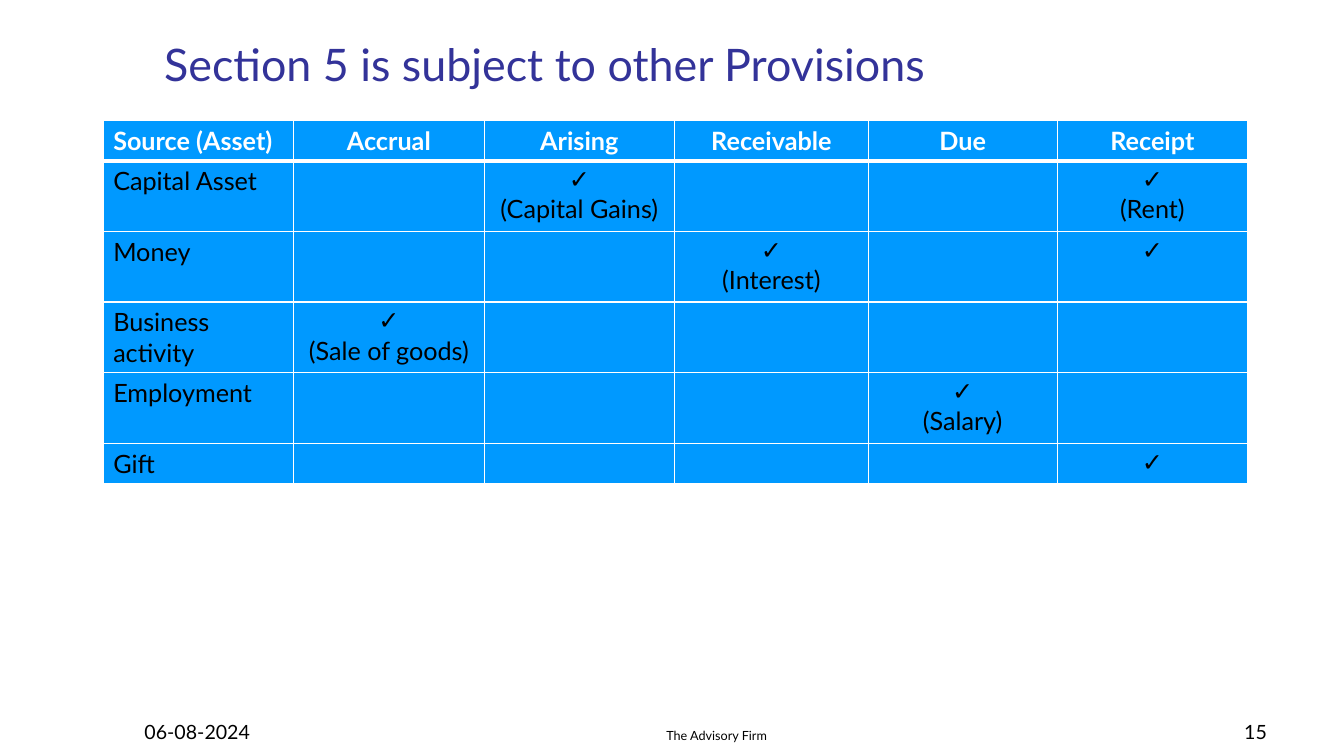
from lxml import etree
from pptx import Presentation
from pptx.dml.color import RGBColor
from pptx.enum import text
from pptx.oxml.ns import qn
from pptx.util import Cm, Pt

COLORS = {"title": "333399", "cell": "0099FF", "light": "FFFFFF", "dark": "000000"}
FONT = "Lato"
CHECK = "✓"
LEFT, CENTER, RIGHT = text.PP_ALIGN.LEFT, text.PP_ALIGN.CENTER, text.PP_ALIGN.RIGHT

HEADERS = ["Source (Asset)", "Accrual", "Arising", "Receivable", "Due", "Receipt"]
# Each source with its checked columns and the note below each check mark
SOURCES = [
    ("Capital Asset", {"Arising": "(Capital Gains)", "Receipt": "(Rent)"}),
    ("Money", {"Receivable": "(Interest)", "Receipt": ""}),
    ("Business activity", {"Accrual": "(Sale of goods)"}),
    ("Employment", {"Due": "(Salary)"}),
    ("Gift", {"Receipt": ""}),
]
COLUMN_WIDTHS = [4.8, 4.8, 4.8, 4.88, 4.76, 4.8]
ROW_HEIGHTS = [1.02, 1.73, 1.73, 1.78, 1.73, 1.02]


def add_run(paragraph, words, size, color, align=LEFT, bold=False):
    paragraph.alignment = align
    run = paragraph.add_run()
    run.text = words
    run.font.name = "Arial" if words == CHECK else FONT
    run.font.size = Pt(size)
    run.font.bold = bold
    run.font.color.rgb = RGBColor.from_string(COLORS[color])


def add_label(slide, words, left, top, width, height, size, color="dark", align=LEFT):
    box = slide.shapes.add_textbox(Cm(left), Cm(top), Cm(width), Cm(height))
    frame = box.text_frame
    frame.word_wrap = True
    frame.vertical_anchor = text.MSO_ANCHOR.BOTTOM
    add_run(frame.paragraphs[0], words, size, color, align)


def add_border(cell, side, width):
    properties = cell._tc.get_or_add_tcPr()
    line = etree.SubElement(properties, qn(f"a:ln{side}"), w=str(Pt(width)))
    fill = etree.SubElement(line, qn("a:solidFill"))
    etree.SubElement(fill, qn("a:srgbClr"), val=COLORS["light"])


def fill_cell(cell, lines, row, column):
    # Borders come before the fill; the rule under the header is thicker
    for side in "LRTB":
        under_header = (row, side) in [(0, "B"), (1, "T")]
        add_border(cell, side, 3 if under_header else 1)
    cell.fill.solid()
    cell.fill.fore_color.rgb = RGBColor.from_string(COLORS["cell"])

    frame = cell.text_frame
    for index, words in enumerate(lines):
        paragraph = frame.add_paragraph() if index else frame.paragraphs[0]
        add_run(paragraph, words, 18, "dark" if row else "light",
                CENTER if column else LEFT, bold=row == 0)


def add_source_table(slide):
    frame = slide.shapes.add_table(
        len(ROW_HEIGHTS), len(COLUMN_WIDTHS), Cm(2.6), Cm(3.03),
        Cm(sum(COLUMN_WIDTHS)), Cm(sum(ROW_HEIGHTS)))
    table = frame.table
    for column, width in zip(table.columns, COLUMN_WIDTHS):
        column.width = Cm(width)
    for row, height in zip(table.rows, ROW_HEIGHTS):
        row.height = Cm(height)

    for column, header in enumerate(HEADERS):
        fill_cell(table.cell(0, column), [header], 0, column)
        for row, (source, checks) in enumerate(SOURCES, start=1):
            if column == 0:
                lines = [source]
            elif header in checks:
                lines = [CHECK, checks[header]] if checks[header] else [CHECK]
            else:
                lines = []
            fill_cell(table.cell(row, column), lines, row, column)


def main():
    presentation = Presentation()
    presentation.slide_width, presentation.slide_height = Cm(33.87), Cm(19.05)
    slide = presentation.slides.add_slide(presentation.slide_layouts[6])

    # Title and table
    add_label(slide, "Section 5 is subject to other Provisions",
              3.89, 0.89, 28.85, 1.52, 32, "title")
    add_source_table(slide)

    # Footer: date, firm, page number
    footer = [("06-08-2024", 3.39, 7.06, 14, LEFT),
              ("The Advisory Firm", 11, 14.12, 9, CENTER),
              ("15", 25.12, 7.06, 14, RIGHT)]
    for words, left, width, size, align in footer:
        add_label(slide, words, left, 17.58, width, 1.27, size, align=align)

    presentation.save("out.pptx")


if __name__ == "__main__":
    main()
